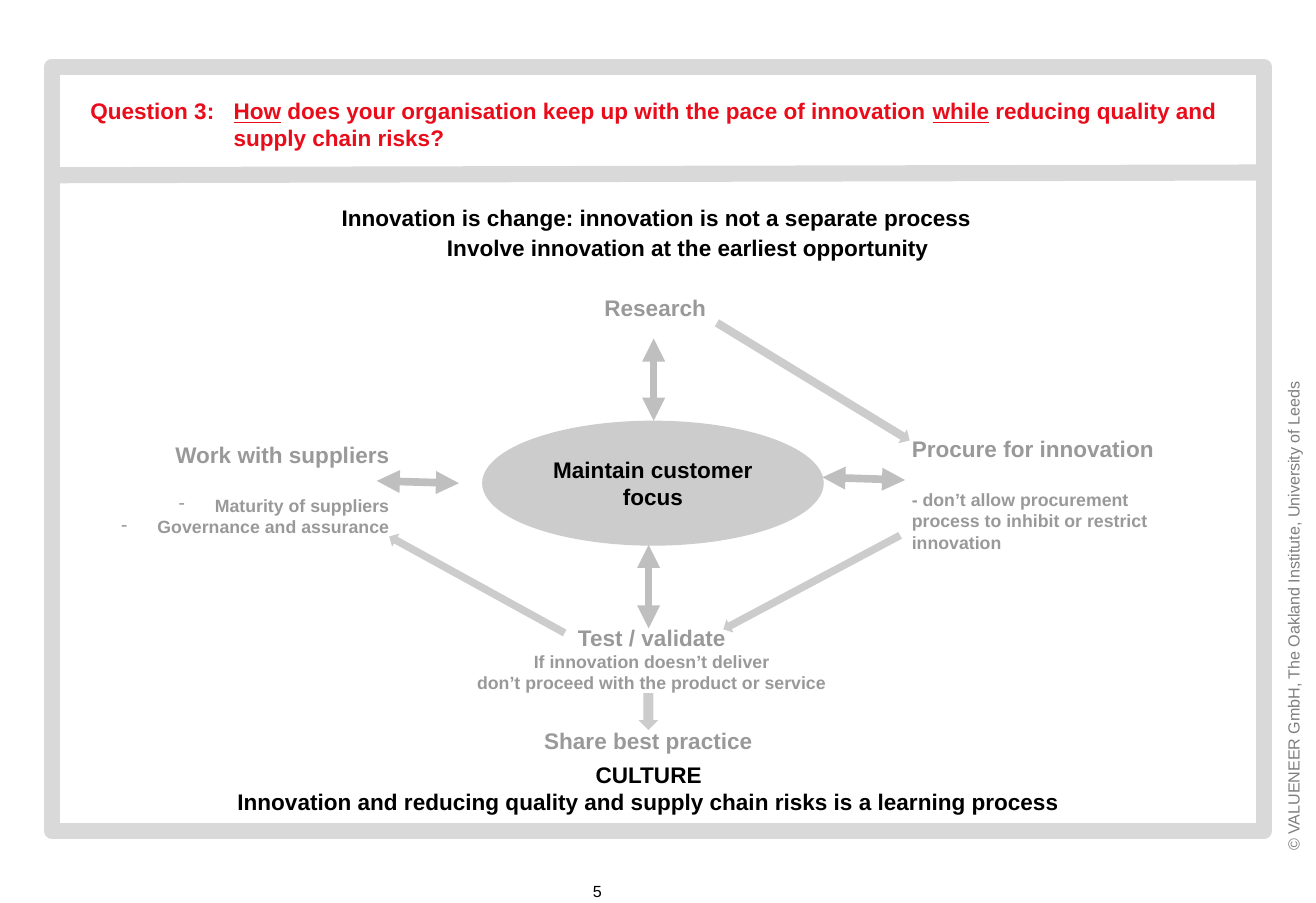
from lxml.etree import SubElement
from pptx import Presentation
from pptx.dml.color import RGBColor
from pptx.enum.shapes import MSO_CONNECTOR as Connector, MSO_SHAPE as Shape
from pptx.enum.text import MSO_ANCHOR as Anchor, PP_ALIGN as Align
from pptx.oxml.ns import qn
from pptx.util import Cm, Pt

COLORS = {
    "red": "E90C1A",
    "black": "000000",
    "label": "999999",
    "note": "7F7F7F",
    "frame": "D9D9D9",
    "shape": "CCCCCC",
    "arrow": "BFBFBF",
}


def color(name):
    return RGBColor.from_string(COLORS[name])


def style_paragraph(para, size, tone, align=Align.LEFT, bold=True):
    para.alignment = align
    for span in para.runs:
        span.font.name = "Arial"
        span.font.size = Pt(size)
        span.font.bold = bold
        span.font.color.rgb = color(tone)


def add_text(page, place, lines, tone, align=Align.LEFT, wrap=False, bold=True):
    box = page.shapes.add_textbox(*map(Cm, place))
    frame = box.text_frame
    frame.word_wrap = wrap
    frame.text = "\n".join(text for text, size in lines)
    for para, (text, size) in zip(frame.paragraphs, lines):
        style_paragraph(para, size, tone, align, bold)
    return box


def add_dashes(paragraphs):
    for para in paragraphs:
        props = para._p.get_or_add_pPr()
        props.set("marL", str(Cm(0.79)))
        props.set("indent", str(-Cm(0.79)))
        SubElement(props, qn("a:buChar"), char="-")


def add_question(page):
    box = add_text(page, (1.73, 2.01, 25.4, 1.27), [("", 14)], "red", wrap=True)
    para = box.text_frame.paragraphs[0]
    props = para._p.get_or_add_pPr()
    props.set("marL", str(Cm(3.14)))
    props.set("indent", str(-Cm(3.14)))
    parts = ["Question 3:\t", "How", " does your organisation keep up with the pace of innovation ",
             "while", " reducing quality and supply chain risks?"]
    for part in parts:
        span = para.add_run()
        span.text = part
        span.font.underline = part in ("How", "while")
    style_paragraph(para, 14, "red")


def add_filled(page, kind, place, rotation=0):
    shape = page.shapes.add_shape(kind, *map(Cm, place))
    shape.shadow.inherit = False
    shape.fill.solid()
    shape.fill.fore_color.rgb = color("shape")
    shape.line.fill.background()
    shape.rotation = rotation
    return shape


def add_line(page, start, end, tone, width, heads=False):
    line = page.shapes.add_connector(Connector.STRAIGHT, *map(Cm, start + end))
    line.line.color.rgb = color(tone)
    line.line.width = Pt(width)
    if heads:
        outline = line.line._get_or_add_ln()
        for tag in ("a:headEnd", "a:tailEnd"):
            SubElement(outline, qn(tag), type="triangle")
    SubElement(line._element.spPr, qn("a:effectLst"))


def add_frame(page):
    frame = page.shapes.add_shape(Shape.RECTANGLE, Cm(1.14), Cm(1.47), Cm(26.57), Cm(16.74))
    frame.shadow.inherit = False
    frame.fill.background()
    frame.line.color.rgb = color("frame")
    frame.line.width = Pt(10)
    add_line(page, (1.3, 3.84), (27.86, 3.78), "frame", 10)
    add_text(page, (12.75, 19.2, 2.16, 0.76), [("5", 10)], "black", bold=False)
    notice = add_text(page, (22.81, 13, 11.1, 0.69),
                      [("© VALUENEER GmbH, The Oakland Institute, University of Leeds", 10)],
                      "note", wrap=True, bold=False)
    notice.rotation = 270


def add_labels(page):
    add_text(page, (9.55, 5, 11.1, 0.86),
             [("Involve innovation at the earliest opportunity", 14)], "black")
    add_text(page, (7.24, 4.34, 14.35, 0.86),
             [("Innovation is change: innovation is not a separate process", 14)], "black")
    add_text(page, (11.68, 15.8, 5.11, 0.86), [("Share best practice", 14)], "label")
    add_text(page, (13, 6.32, 2.87, 0.86), [("Research", 14)], "label")
    procure = add_text(page, (19.74, 9.4, 6.1, 2.87), [
        ("Procure for innovation", 14),
        ("- don’t allow procurement process to inhibit or restrict innovation", 11),
    ], "label", wrap=True)
    add_text(page, (10.19, 13.54, 8.2, 1.8), [
        ("Test / validate", 14),
        ("If innovation doesn’t deliver", 11),
        ("don’t proceed with the product or service", 11),
    ], "label", Align.CENTER)
    suppliers = add_text(page, (2.29, 9.53, 6.5, 3), [
        ("Work with suppliers", 14),
        ("Maturity of suppliers", 11),
        ("Governance and assurance", 11),
    ], "label", Align.RIGHT)
    add_dashes(suppliers.text_frame.paragraphs[1:])
    for box in (procure, suppliers):
        box.text_frame.paragraphs[1].space_before = Pt(17)
    add_text(page, (4.72, 16.56, 19, 1.45), [
        ("CULTURE", 14),
        ("Innovation and reducing quality and supply chain risks is a learning process", 14),
    ], "black", Align.CENTER)


def add_focus(page):
    focus = add_filled(page, Shape.OVAL, (10.57, 9.22, 7.49, 2.74))
    frame = focus.text_frame
    frame.word_wrap = True
    frame.vertical_anchor = Anchor.MIDDLE
    frame.text = "Maintain customer focus"
    style_paragraph(frame.paragraphs[0], 14, "black", Align.CENTER)


def add_arrows(page):
    flows = [
        ((14, 15.19, 0.43, 0.81), 0),
        ((17.65, 5.89, 0.36, 4.95), 301.4),
        ((17.63, 10.57, 0.33, 4.39), 62),
        ((10.29, 10.62, 0.33, 4.39), 118.8),
    ]
    for place, rotation in flows:
        add_filled(page, Shape.DOWN_ARROW, place, rotation)
    exchanges = [
        ((14.33, 7.42), (14.33, 9.22)),
        ((14.22, 11.94), (14.22, 13.77)),
        ((10.06, 10.59), (8.26, 10.54)),
        ((19.84, 10.52), (18.03, 10.46)),
    ]
    for start, end in exchanges:
        add_line(page, start, end, "arrow", 4.75, heads=True)


def main():
    deck = Presentation()
    deck.slide_width = Cm(28.85)
    deck.slide_height = Cm(19.79)
    page = deck.slides.add_slide(deck.slide_layouts[6])
    add_frame(page)
    add_question(page)
    add_labels(page)
    add_focus(page)
    add_arrows(page)
    deck.save("out.pptx")


if __name__ == "__main__":
    main()
